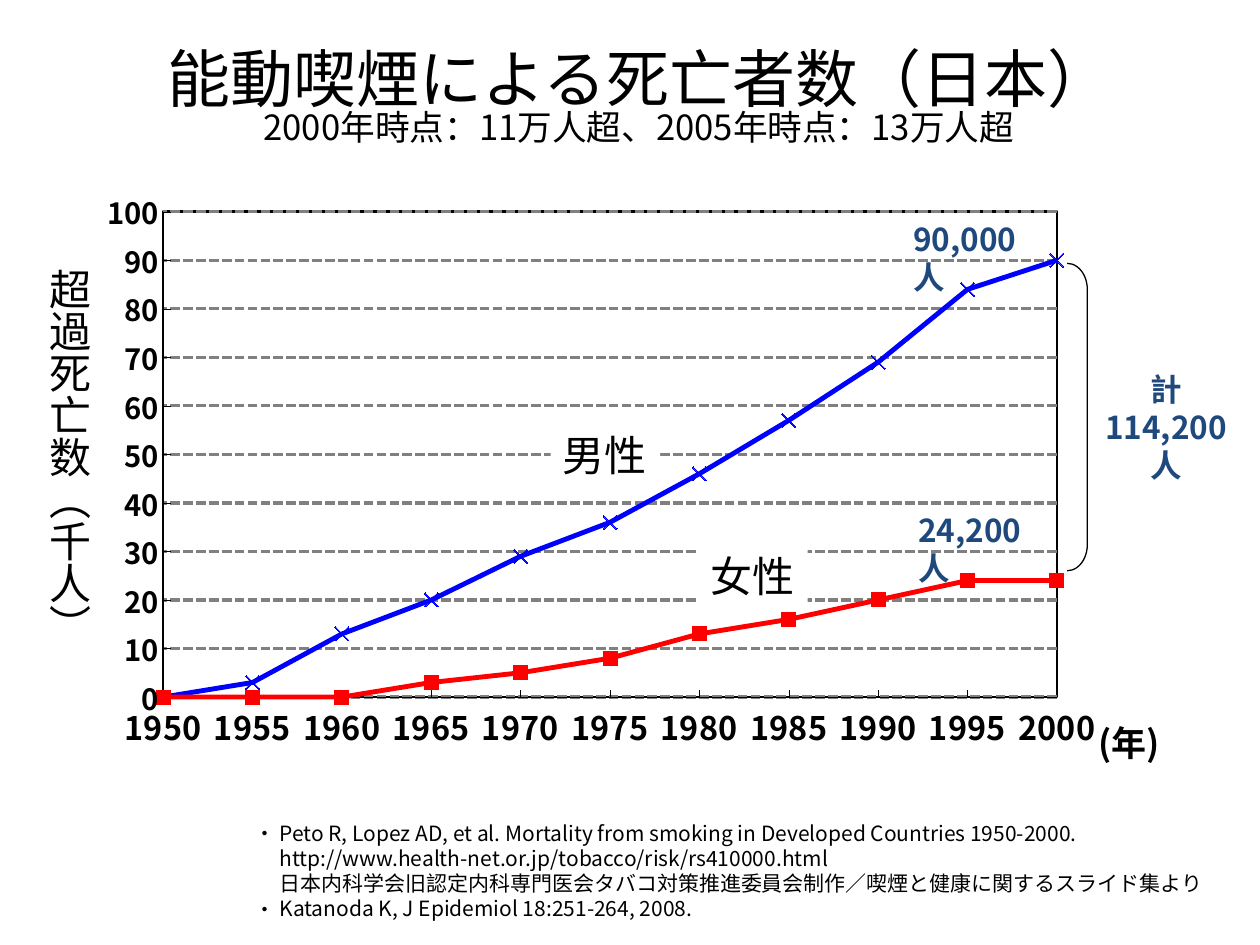
from lxml import etree
from pptx import Presentation
from pptx.chart.data import CategoryChartData
from pptx.dml.color import RGBColor
from pptx.enum.chart import XL_CHART_TYPE, XL_MARKER_STYLE, XL_TICK_MARK
from pptx.enum.dml import MSO_LINE
from pptx.enum.shapes import MSO_SHAPE
from pptx.enum.text import MSO_ANCHOR, PP_ALIGN
from pptx.oxml import parse_xml
from pptx.oxml.ns import nsdecls, qn
from pptx.util import Emu, Pt

FONT = "Noto Sans CJK JP"
EMU_PER_PX = 9144
BLACK, WHITE, NAVY = "000000", "FFFFFF", "1F497D"
LEFT, CENTER = PP_ALIGN.LEFT, PP_ALIGN.CENTER
TOP, MIDDLE = MSO_ANCHOR.TOP, MSO_ANCHOR.MIDDLE
LINE_MARKERS = XL_CHART_TYPE.LINE_MARKERS
TICK_INSIDE = XL_TICK_MARK.INSIDE
CROSS, SQUARE = XL_MARKER_STYLE.X, XL_MARKER_STYLE.SQUARE
SQUARE_DOT = MSO_LINE.SQUARE_DOT
RECTANGLE, RIGHT_BRACKET = MSO_SHAPE.RECTANGLE, MSO_SHAPE.RIGHT_BRACKET

YEARS = [str(year) for year in range(1950, 2001, 5)]
MEN = [0, 3, 13, 20, 29, 36, 46, 57, 69, 84, 90]
WOMEN = [0, 0, 0, 3, 5, 8, 13, 16, 20, 24, 24]
SOURCES = [
    ("Peto R, Lopez AD, et al. Mortality from smoking in Developed Countries 1950-2000.", True),
    ("http://www.health-net.or.jp/tobacco/risk/rs410000.html", False),
    ("日本内科学会旧認定内科専門医会タバコ対策推進委員会制作／喫煙と健康に関するスライド集より", False),
    ("Katanoda K, J Epidemiol 18:251-264, 2008.", True),
]


def px(length):
    """Turn a length in px into EMU."""
    return Emu(length * EMU_PER_PX)


def color(value):
    """Return the colour of a hex string."""
    return RGBColor.from_string(value)


def set_font(font, size, ink=BLACK, bold=False):
    """Apply typeface, size, colour and weight to a font."""
    font.name, font.size, font.bold = FONT, Pt(size), bold
    font.color.rgb = color(ink)


def set_line(line, ink, width):
    """Give a line its colour and width."""
    line.color.rgb = color(ink)
    line.width = Pt(width)


def write(paragraph, text, size=24, ink=BLACK, bold=False, align=LEFT):
    """Add one formatted run to a paragraph."""
    paragraph.alignment = align
    run = paragraph.add_run()
    run.text = text
    set_font(run.font, size, ink, bold)
    east_asian = etree.SubElement(run.font._element, qn("a:ea"))
    east_asian.set("typeface", FONT)


def add_text(slide, box, lines, anchor=TOP, vertical=False, **text_format):
    """Add a text box with one paragraph for each line."""
    shape = slide.shapes.add_textbox(*map(px, box))
    frame = shape.text_frame
    frame.word_wrap = True
    frame.vertical_anchor = anchor
    if vertical:
        frame._txBody.bodyPr.set("vert", "eaVert")
    for index, line in enumerate(lines):
        paragraph = frame.add_paragraph() if index else frame.paragraphs[0]
        write(paragraph, line, **text_format)
    return shape


def add_title(slide):
    """Add the heading with its smaller second line."""
    shape = add_text(slide, (82, 25, 850, 110), ["能動喫煙による死亡者数（日本）"],
                     anchor=MIDDLE, size=36, align=CENTER)
    paragraph = shape.text_frame.paragraphs[0]
    paragraph.line_spacing = 0.8
    paragraph.add_line_break()
    write(paragraph, "2000年時点：11万人超、2005年時点：13万人超", size=19.8, align=CENTER)


def add_series_label(slide, left, top, text):
    """Add a white label that covers the gridlines."""
    shape = slide.shapes.add_shape(RECTANGLE, *map(px, (left, top, 87, 50)))
    shape.shadow.inherit = False
    shape.fill.solid()
    shape.fill.fore_color.rgb = color(WHITE)
    shape.line.fill.background()
    shape.text_frame.word_wrap = False
    shape.text_frame.vertical_anchor = TOP
    write(shape.text_frame.paragraphs[0], text)


def add_bracket(slide):
    """Add the bracket that joins both end values."""
    shape = slide.shapes.add_shape(RIGHT_BRACKET, *map(px, (847, 209, 16, 244)))
    shape.shadow.inherit = False
    shape.adjustments[0] = 1.3
    shape.fill.background()
    set_line(shape.line, BLACK, 0.75)


def add_sources(slide):
    """Add the reference list with hanging bullets."""
    shape = add_text(slide, (192, 646, 788, 91), [text for text, _ in SOURCES], size=12)
    for paragraph, (_, bulleted) in zip(shape.text_frame.paragraphs, SOURCES):
        properties = paragraph._p.get_or_add_pPr()
        properties.set("marL", str(px(20)))
        properties.set("indent", str(px(-20) if bulleted else 0))
        if bulleted:
            bullet_font = etree.SubElement(properties, qn("a:buFont"))
            bullet_font.set("typeface", FONT)
            etree.SubElement(properties, qn("a:buChar")).set("char", "・")


def style_axis(axis, size):
    """Give an axis its ticks, line and labels."""
    axis.major_tick_mark = TICK_INSIDE
    set_line(axis.format.line, BLACK, 0.23)
    set_font(axis.tick_labels.font, size, bold=True)


def style_series(series, ink, marker_style, marker_ink):
    """Give a series its line and markers."""
    series.smooth = False
    set_line(series.format.line, ink, 2.78)
    marker = series.marker
    marker.style, marker.size = marker_style, 8
    marker.format.fill.solid()
    marker.format.fill.fore_color.rgb = color(marker_ink)
    set_line(marker.format.line, marker_ink, 0.75)


def frame_plot(chart, left, top, width, height):
    """Fix the inner plot area, draw its border and start lines on the axis."""
    plot_area = chart._chartSpace.chart.plotArea
    for layout in plot_area.findall(qn("c:layout")):
        plot_area.remove(layout)
    plot_area.insert(0, parse_xml(
        f'<c:layout {nsdecls("c")}><c:manualLayout><c:layoutTarget val="inner"/>'
        '<c:xMode val="edge"/><c:yMode val="edge"/>'
        f'<c:x val="{left}"/><c:y val="{top}"/><c:w val="{width}"/><c:h val="{height}"/>'
        '</c:manualLayout></c:layout>'))
    plot_area.append(parse_xml(
        f'<c:spPr {nsdecls("c", "a")}><a:noFill/><a:ln w="19050"><a:solidFill>'
        f'<a:srgbClr val="{BLACK}"/></a:solidFill></a:ln></c:spPr>'))
    crossing = plot_area.find(f'{qn("c:valAx")}/{qn("c:crosses")}')
    crossing.addnext(parse_xml(f'<c:crossBetween {nsdecls("c")} val="midCat"/>'))


def add_deaths_chart(slide):
    """Add the line chart of deaths by year."""
    data = CategoryChartData()
    data.categories = YEARS
    data.add_series("男性", MEN)
    data.add_series("女性", WOMEN)
    chart = slide.shapes.add_chart(LINE_MARKERS, *map(px, (58, 139, 822, 484)), data).chart
    chart.has_legend = chart.has_title = False
    set_font(chart.font, 16.7, bold=True)
    chart.plots[0].vary_by_categories = False
    style_axis(chart.category_axis, 18.5)
    value_axis = chart.value_axis
    style_axis(value_axis, 16.7)
    value_axis.minimum_scale, value_axis.maximum_scale, value_axis.major_unit = 0, 100, 10
    gridlines = value_axis.major_gridlines.format.line
    set_line(gridlines, "808080", 1.85)
    gridlines.dash_style = SQUARE_DOT
    men, women = chart.plots[0].series
    style_series(men, "0000FF", CROSS, "000080")
    style_series(women, "FF0000", SQUARE, "FF0000")
    frame_plot(chart, 0.087, 0.06, 0.863, 0.796)


def main():
    """Build the slide and save it."""
    presentation = Presentation()
    presentation.slide_width, presentation.slide_height = px(1000), px(750)
    slide = presentation.slides.add_slide(presentation.slide_layouts[6])
    add_title(slide)
    add_deaths_chart(slide)
    add_series_label(slide, 437, 336, "男性")
    add_text(slide, (719, 401, 121, 40), ["24,200人"], size=18, ink=NAVY, bold=True)
    add_text(slide, (715, 170, 121, 40), ["90,000人"], size=18, ink=NAVY, bold=True)
    add_sources(slide)
    add_text(slide, (19, 203, 61, 330), ["超過死亡数（千人）"], vertical=True)
    add_text(slide, (862, 568, 87, 43), ["(年)"], size=20, bold=True)
    add_bracket(slide)
    add_text(slide, (858, 289, 135, 71), ["計", "114,200人"],
             size=18, ink=NAVY, bold=True, align=CENTER)
    add_series_label(slide, 554, 432, "女性")
    presentation.save("out.pptx")


if __name__ == "__main__":
    main()
